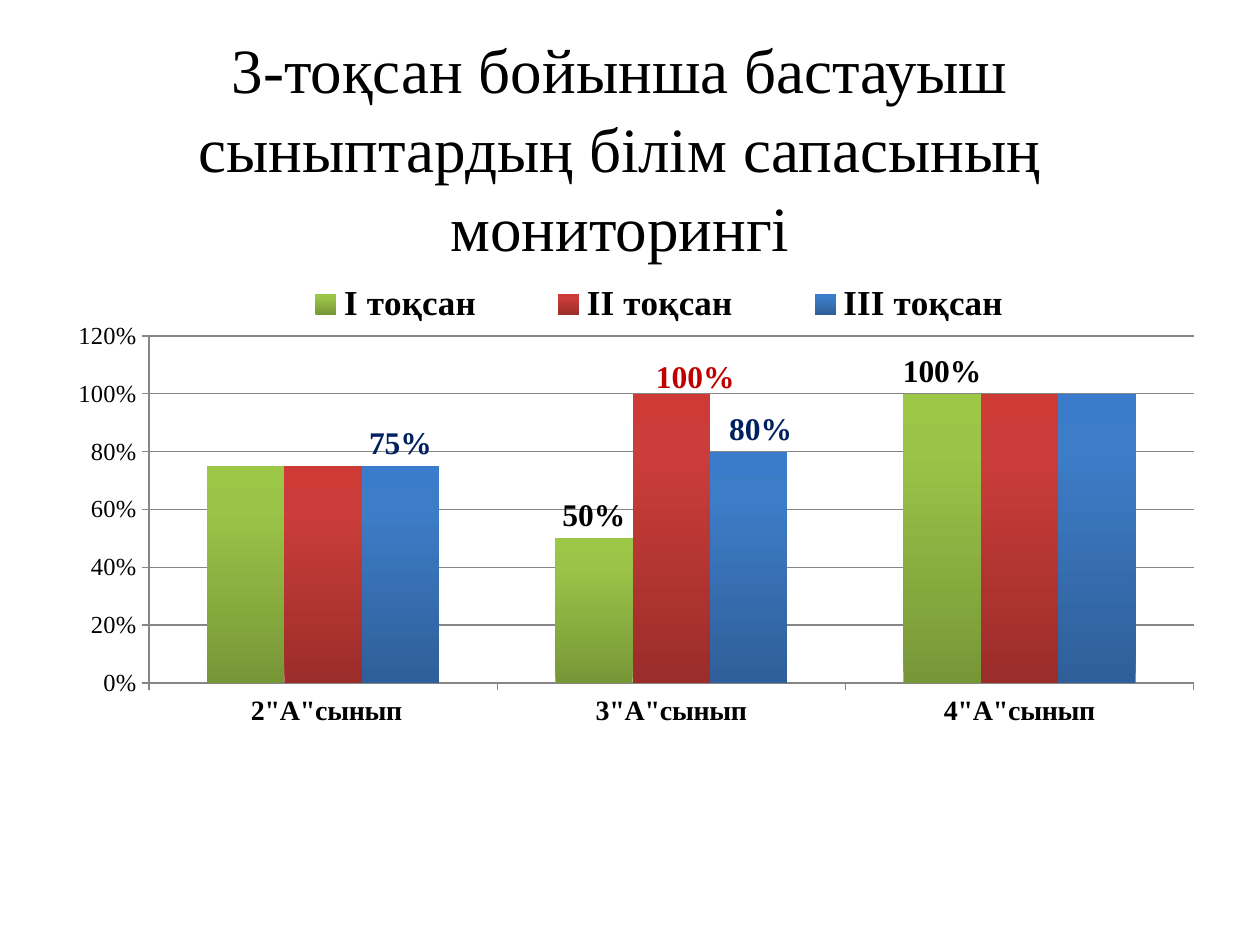
"""Build a slide with a quarterly chart of class results."""
from dataclasses import dataclass
from typing import Any

from pptx import Presentation
from pptx import oxml
from pptx.chart import data as chart_data
from pptx.dml.color import RGBColor
from pptx.enum import chart as ch, text
from pptx.oxml import ns
from pptx.util import Inches, Pt

BLACK = RGBColor(0x00, 0x00, 0x00)
GRID = RGBColor(0x86, 0x86, 0x86)
RED = RGBColor(0xC0, 0x00, 0x00)
NAVY = RGBColor(0x00, 0x20, 0x60)
GREEN_BARS = (RGBColor(0x77, 0x97, 0x37), RGBColor(0x9B, 0xC3, 0x48), RGBColor(0x9D, 0xC7, 0x46))
RED_BARS = (RGBColor(0x9B, 0x2D, 0x2A), RGBColor(0xCB, 0x3D, 0x3A), RGBColor(0xCE, 0x3B, 0x37))
BLUE_BARS = (RGBColor(0x2F, 0x5F, 0x99), RGBColor(0x3D, 0x7C, 0xC7), RGBColor(0x3A, 0x7C, 0xCB))

CLASSES = (' 2"А"сынып', '3"А"сынып', '4"А"сынып')
QUARTERS = (
    ("I тоқсан", (0.75, 0.5, 1), GREEN_BARS, BLACK, {1: (0, 0), 2: (0, 0)}),
    ("II тоқсан", (0.75, 1, 1), RED_BARS, RED, {1: (0.02, 0.01)}),
    ("III тоқсан", (0.75, 0.8, 1), BLUE_BARS, NAVY, {0: (0, 0), 1: (0.01, 0)}),
)


@dataclass
class SlideWriter:
    """Hold the slide and its typeface, and add styled elements."""
    slide: Any
    typeface: str = "Times New Roman"

    def style(self, font, size, bold=False, color=BLACK):
        """Apply the slide's typeface to a font."""
        font.name, font.size, font.bold = self.typeface, Pt(size), bold
        font.color.rgb = color

    def title(self, words, left, top, width, height):
        """Add the centred heading."""
        box = self.slide.shapes.add_textbox(*map(Inches, (left, top, width, height)))
        frame = box.text_frame
        frame.word_wrap = True
        frame.text = words
        para = frame.paragraphs[0]
        para.alignment = text.PP_ALIGN.CENTER
        para.line_spacing = 1.05
        self.style(para.runs[0].font, 36)

    def column_chart(self, left, top, width, height):
        """Add the clustered columns and return the chart."""
        values = chart_data.CategoryChartData(number_format="0%")
        values.categories = CLASSES
        for name, numbers, *_ in QUARTERS:
            values.add_series(name, numbers)
        chart = self.slide.shapes.add_chart(
            ch.XL_CHART_TYPE.COLUMN_CLUSTERED,
            *map(Inches, (left, top, width, height)), values).chart
        chart.has_title = False
        chart.font.size = Pt(18)
        chart.font.name = "Calibri"
        plot = chart.plots[0]
        plot.gap_width, plot.overlap, plot.vary_by_categories = 150, 0, False
        for series, (_, _, stops, color, labels) in zip(plot.series, QUARTERS):
            self.gradient(series, stops)
            series.data_labels.show_value = False
            for index, offset in labels.items():
                self.point_label(series.points[index].data_label, color, offset)
        return chart

    def gradient(self, series, stops):
        """Fill the columns from dark at the foot to light at the top."""
        marks = "".join(
            f'<a:gs pos="{place}"><a:srgbClr val="{color}"/></a:gs>'
            for place, color in zip((0, 80000, 100000), stops))
        fill = oxml.parse_xml(
            f'<a:gradFill {ns.nsdecls("a")} rotWithShape="1"><a:gsLst>{marks}</a:gsLst>'
            '<a:lin ang="16200000" scaled="0"/></a:gradFill>')
        series._element.get_or_add_spPr().insert(0, fill)

    def point_label(self, label, color, offset):
        """Show one value above its column, shifted by an offset."""
        self.style(label.font, 18, True, color)
        label.position = ch.XL_LABEL_POSITION.OUTSIDE_END
        if any(offset):
            label._get_or_add_dLbl().insert(1, self.layout(*offset))

    def layout(self, x, y, size=None, inner=False):
        """Return a manual chart layout, as shares of the chart."""
        parts = '<c:layoutTarget val="inner"/>' if inner else ""
        if size:
            parts += '<c:xMode val="edge"/><c:yMode val="edge"/>'
        parts += f'<c:x val="{x}"/><c:y val="{y}"/>'
        if size:
            parts += f'<c:w val="{size[0]}"/><c:h val="{size[1]}"/>'
        return oxml.parse_xml(
            f'<c:layout {ns.nsdecls("c")}><c:manualLayout>{parts}</c:manualLayout></c:layout>')

    def axes(self, chart):
        """Style both axes and the gridlines."""
        scale = chart.value_axis
        scale.minimum_scale, scale.maximum_scale, scale.major_unit = 0, 1.2, 0.2
        scale.tick_labels.number_format = "0%"
        scale.tick_labels.number_format_is_linked = False
        scale.has_major_gridlines = True
        for axis, size, bold in ((chart.category_axis, 16, True), (scale, 14, False)):
            self.style(axis.tick_labels.font, size, bold)
            axis.major_tick_mark = ch.XL_TICK_MARK.OUTSIDE
            axis.format.line.color.rgb = GRID
        scale.major_gridlines.format.line.color.rgb = GRID
        area = chart._chartSpace.chart.plotArea
        for old in area.findall(ns.qn("c:layout")):
            area.remove(old)
        area.insert(0, self.layout(0.1, 0.13, (0.87, 0.6), inner=True))

    def legend(self, chart):
        """Place the legend in a row above the columns."""
        chart.has_legend = True
        legend = chart.legend
        legend.position = ch.XL_LEGEND_POSITION.RIGHT
        legend.include_in_layout = False
        self.style(legend.font, 20, True)
        element = legend._element
        for old in element.findall(ns.qn("c:layout")):
            element.remove(old)
        element.find(ns.qn("c:legendPos")).addnext(self.layout(0.18, 0.03, (0.69, 0.09)))


def main():
    """Build and save the deck."""
    deck = Presentation()
    deck.slide_width, deck.slide_height = Inches(10), Inches(7.5)
    page = SlideWriter(deck.slides.add_slide(deck.slide_layouts[6]))
    page.title("3-тоқсан бойынша бастауыш сыныптардың білім сапасының мониторингі",
               0.39, 0.16, 9.06, 1.92)
    chart = page.column_chart(0.23, 2.07, 9.53, 4.59)
    page.axes(chart)
    page.legend(chart)
    deck.save("out.pptx")


if __name__ == "__main__":
    main()
